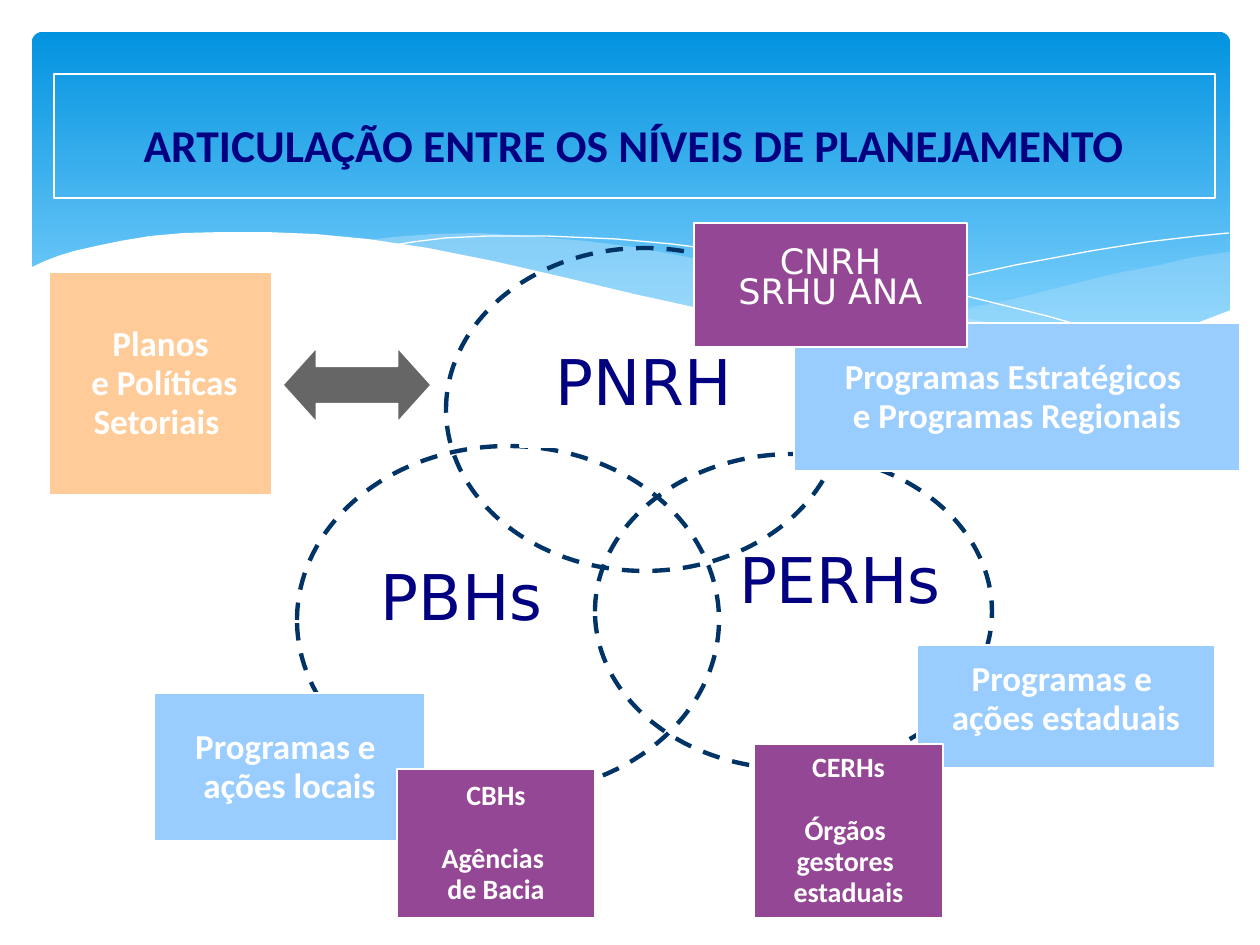
from lxml import etree
from pptx import Presentation
from pptx.dml.color import RGBColor
from pptx.enum.dml import MSO_LINE
from pptx.enum.shapes import MSO_SHAPE
from pptx.enum.text import MSO_ANCHOR, MSO_AUTO_SIZE, PP_ALIGN
from pptx.oxml.ns import qn
from pptx.util import Pt

PX = 914400 // 126
WHITE = RGBColor(0xFF, 0xFF, 0xFF)
NAVY = RGBColor(0x00, 0x00, 0x80)
RING = RGBColor(0x00, 0x33, 0x66)
SKY = RGBColor(0x99, 0xCC, 0xFF)
PURPLE = RGBColor(0x94, 0x47, 0x94)
PEACH = RGBColor(0xFF, 0xCC, 0x99)
GREY = RGBColor(0x66, 0x66, 0x66)
BANNER_TOP = RGBColor(0x02, 0x93, 0xE0)
BANNER_END = RGBColor(0x83, 0xD3, 0xFE)
WAVE = RGBColor(0xC6, 0xE7, 0xFC)
PROCESS = MSO_SHAPE.FLOWCHART_PROCESS
ROUNDED = MSO_SHAPE.ROUNDED_RECTANGLE
OVAL = MSO_SHAPE.OVAL
ARROW = MSO_SHAPE.LEFT_RIGHT_ARROW
DASH = MSO_LINE.DASH
MIDDLE = MSO_ANCHOR.MIDDLE
NO_FIT = MSO_AUTO_SIZE.NONE
CENTER = PP_ALIGN.CENTER

deck = Presentation()
deck.slide_width = 1260 * PX
deck.slide_height = 945 * PX
page = deck.slides.add_slide(deck.slide_layouts[5])


def add_box(kind, area, fill=None, line=WHITE, width=0.75):
    box = page.shapes.add_shape(kind, *(n * PX for n in area))
    box.shadow.inherit = False
    if fill is None:
        box.fill.background()
    else:
        box.fill.solid()
        box.fill.fore_color.rgb = fill
    if line is None:
        box.line.fill.background()
    else:
        box.line.color.rgb = line
        box.line.width = Pt(width)
    return box


def write_lines(box, lines, size, color, font, spacing, bold=False):
    frame = box.text_frame
    frame.auto_size = NO_FIT
    frame.word_wrap = False
    frame.vertical_anchor = MIDDLE
    for index, line in enumerate(lines):
        para = frame.paragraphs[0] if index == 0 else frame.add_paragraph()
        para.text = line
        para.alignment = CENTER
        para.line_spacing = spacing
        para.font.size = Pt(size)
        para.font.name = font
        para.font.bold = bold
        para.font.color.rgb = color
    return frame


# Banner with a vertical gradient
banner = add_box(ROUNDED, (32, 32, 1198, 340), line=None)
banner.adjustments[0] = 0.03
banner.fill.gradient()
banner.fill.gradient_angle = 270
first_stop, last_stop = banner.fill.gradient_stops
first_stop.color.rgb = BANNER_TOP
last_stop.color.rgb = BANNER_END
last_stop.position = 0.9

# Waves at the foot of the banner: points, fill, opacity in percent
right_wave = [
    (1229, 252), (1194, 257), (1160, 265), (1123, 272), (1085, 281), (1014, 299),
    (949, 312), (890, 324), (833, 334), (871, 339), (922, 345), (969, 349),
    (1026, 350), (1076, 348), (1120, 343), (1160, 334), (1196, 324), (1230, 311),
    (1230, 252)]
middle_wave = [
    (1125, 344), (1055, 334), (976, 320), (890, 302), (793, 280), (736, 266),
    (682, 256), (633, 247), (586, 241), (529, 236), (479, 233), (433, 234),
    (394, 237), (360, 241), (407, 247), (456, 256), (509, 266), (566, 280),
    (668, 302), (757, 321), (819, 333), (876, 340), (927, 347), (989, 350),
    (1043, 350), (1092, 348)]
falling_line = [
    (389, 246), (413, 242), (445, 238), (488, 236), (546, 236), (616, 239),
    (672, 244), (733, 252), (801, 262), (876, 276), (958, 294), (1047, 316),
    (1143, 343)]
rising_line = [
    (772, 324), (823, 310), (876, 296), (942, 281), (1016, 265), (1091, 251),
    (1147, 242), (1198, 236), (1229, 233)]
white_wave = [
    (1231, 310), (1197, 323), (1159, 334), (1118, 341), (1071, 347), (1019, 349),
    (959, 347), (892, 340), (816, 330), (730, 315), (634, 294), (563, 277),
    (493, 261), (428, 248), (368, 239), (315, 234), (266, 232), (223, 232),
    (184, 233), (150, 236), (120, 241), (96, 246), (74, 251), (58, 256),
    (45, 261), (32, 267), (29, 268), (29, 415), (1231, 415)]

for points, fill, opacity in [
    (right_wave, WAVE, 29),
    (middle_wave, WAVE, 40),
    (falling_line, None, 100),
    (rising_line, None, 100),
    (white_wave, WHITE, 100),
]:
    builder = page.shapes.build_freeform(*points[0], scale=PX)
    builder.add_line_segments(points[1:], close=fill is not None)
    curve = builder.convert_to_shape()
    curve.shadow.inherit = False
    if fill is None:
        curve.fill.background()
        curve.line.color.rgb = WHITE
        curve.line.width = Pt(0)
        continue
    curve.line.fill.background()
    curve.fill.solid()
    curve.fill.fore_color.rgb = fill
    if opacity < 100:
        tint = next(curve.element.iter(qn("a:srgbClr")))
        etree.SubElement(tint, qn("a:alpha"), val=str(opacity * 1000))

# Title, brought in front of the banner
title = page.shapes.title
title.left, title.top, title.width, title.height = (
    n * PX for n in (54, 74, 1161, 124))
title.line.color.rgb = WHITE
title.line.width = Pt(0.75)
write_lines(title, ["ARTICULAÇÃO ENTRE OS NÍVEIS DE PLANEJAMENTO"],
            26, NAVY, "Calibri", 1.31, True)
title.element.getparent().append(title.element)

# Three overlapping planning levels
for area in [(446, 248, 397, 323), (595, 454, 397, 315), (297, 446, 422, 348)]:
    ring = add_box(OVAL, area, line=RING, width=2.5)
    ring.line.dash_style = DASH

for kind, name, area in [
    (ROUNDED, "PNRH", (520, 348, 248, 99)),
    (PROCESS, "PERHs", (753, 556, 174, 79)),
    (PROCESS, "PBHs", (392, 581, 164, 59)),
]:
    label = add_box(kind, area, WHITE)
    if kind == ROUNDED:
        label.adjustments[0] = 0
    frame = write_lines(label, [name], 36, NAVY, "DejaVu Sans", 0.37)
# The last label ends in a wider space
span = frame.paragraphs[0].add_run()
span.text = " "
span.font.size = Pt(44)

# Programmes of each level
for lines, area, bottom_inset in [
    (["Programas Estratégicos ", "e Programas Regionais"], (794, 323, 446, 148), 6),
    (["Programas e ", "ações estaduais"], (917, 645, 298, 123), 21),
    (["Programas e ", "ações locais"], (154, 693, 271, 148), 6),
]:
    programme = add_box(PROCESS, area, SKY)
    frame = write_lines(programme, lines, 20, WHITE, "Calibri", 0.93, True)
    frame.margin_bottom = bottom_inset * PX

# Bodies in charge, with a gap after the first line
for lines, area, size, font, spacing, bold, gap in [
    (["CNRH", "SRHU ANA"], (694, 223, 273, 124), 20, "DejaVu Sans", 0.37, False, 8.6),
    (["CERHs", "Órgãos ", "gestores ", "estaduais"], (754, 744, 189, 174),
     16, "Calibri", 0.93, True, 18),
    (["CBHs", "Agências ", "de Bacia"], (397, 769, 198, 149),
     16, "Calibri", 0.93, True, 18),
]:
    body = add_box(PROCESS, area, PURPLE)
    frame = write_lines(body, lines, size, WHITE, font, spacing, bold)
    frame.paragraphs[1].space_before = Pt(gap)

# Sector plans and the arrow to the national plan
arrow = add_box(ARROW, (283, 348, 148, 74), GREY)
arrow.adjustments[1] = 0.45
sector = add_box(PROCESS, (49, 272, 223, 223), PEACH)
write_lines(sector, ["Planos", " e Políticas", "Setoriais "],
            20, WHITE, "Calibri", 0.93, True)

deck.save("out.pptx")
